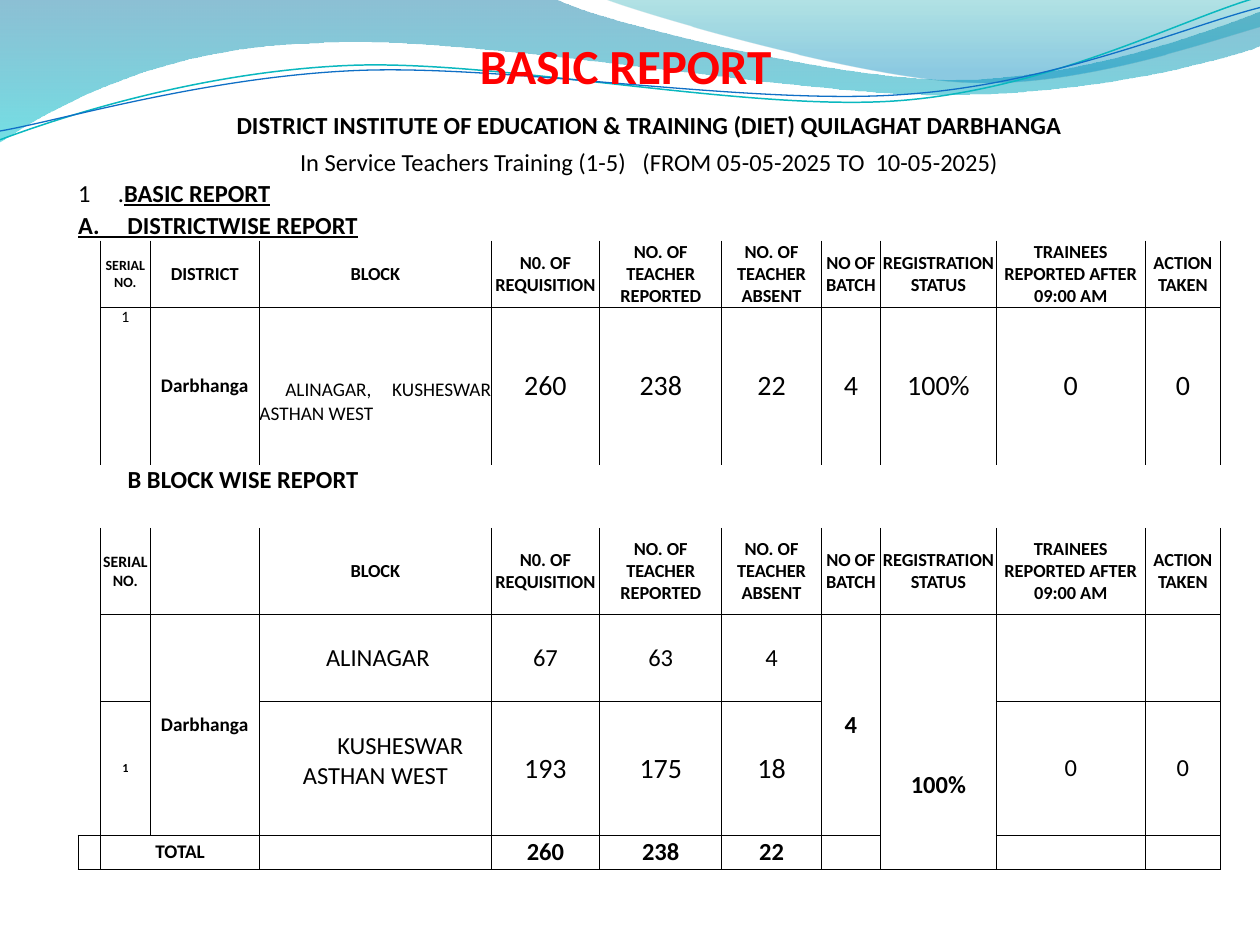
from dataclasses import dataclass
from itertools import product

from lxml.etree import SubElement
from pptx import Presentation
from pptx.dml.color import RGBColor
from pptx.enum.text import MSO_ANCHOR, PP_ALIGN
from pptx.oxml.ns import qn
from pptx.util import Cm, Pt

COLORS = {
    "black": "000000", "title": "FF0000",
    "deep": "0074A1", "aqua": "00C6CF", "teal": "00A1A9", "sky": "008BBF",
    "thread": "0AB8BF", "blue": "0F6FC6",
}
INCH = 2.54
LEFT, CENTER, JUSTIFY = PP_ALIGN.LEFT, PP_ALIGN.CENTER, PP_ALIGN.JUSTIFY
TOP, MIDDLE, BOTTOM = MSO_ANCHOR.TOP, MSO_ANCHOR.MIDDLE, MSO_ANCHOR.BOTTOM
SIDES = {"l": "a:lnL", "r": "a:lnR", "t": "a:lnT", "b": "a:lnB"}


@dataclass
class Wave:
    start: tuple
    segments: list
    stops: tuple = ()
    line: str = ""
    width: float = 0


@dataclass
class Entry:
    text: str
    size: float = 14
    bold: bool = False
    underline: bool = False
    align: int = CENTER
    anchor: int = MIDDLE
    indent: float = 0
    tab: float = 0
    top: float = 0


WAVES = [
    Wave((0, 0), [(4.4, -0.01), (4.76, 0.17, 6.64, 0.63, 7.58, 0.63),
                  (8.53, 0.63, 9.58, 0.26, 10, 0.09), (10.01, 0.36),
                  (9.83, 0.44, 8.7, 0.76, 7.46, 0.75),
                  (6.22, 0.75, 3.82, 0.28, 2.57, 0.34),
                  (1.29, 0.36, 0.46, 0.83, -0.01, 1.13)],
         stops=((0, "deep", 45), (100, "aqua", 55))),
    Wave((4.79, -0.01), [(5.09, 0.11, 6.82, 0.62, 7.69, 0.65),
                         (8.56, 0.69, 9.61, 0.32, 10, 0.21), (10, 0)],
         stops=((0, "teal", 30), (80, "sky", 45))),
    Wave((0, 1.11), [(0.48, 0.93, 1.58, 0.57, 2.77, 0.52),
                     (3.95, 0.47, 5.93, 0.89, 7.13, 0.8),
                     (8.33, 0.71, 9.38, 0.15, 9.98, -0.02)], line="thread", width=0.85),
    Wave((0, 1.04), [(0.47, 0.96, 1.64, 0.61, 2.83, 0.56),
                     (4.03, 0.51, 5.97, 0.84, 7.17, 0.75),
                     (8.36, 0.67, 9.41, 0.21, 10, 0.06)], line="blue", width=0.75),
]

COLS = [0.18, 0.39, 0.87, 1.84, 0.86, 0.97, 0.79, 0.47, 0.92, 1.18, 0.6]
ROWS = [0.26, 0.29, 0.25, 0.25, 0.53, 1.25, 0.5, 0.69, 0.69, 1.06, 0.27]
BANNER_ROWS = (0, 1, 2, 3, 6)
HEADER_ROWS = (4, 7)
MERGES = [(r, 0, r, 10) for r in BANNER_ROWS] + [
    (8, 2, 9, 2), (8, 7, 9, 7), (9, 8, 10, 8), (10, 1, 10, 2)]
HEADERS = ["BLOCK", "N0. OF REQUISITION", "NO. OF TEACHER REPORTED",
           "NO. OF TEACHER ABSENT", "NO OF BATCH", "REGISTRATION STATUS",
           "TRAINEES REPORTED AFTER 09:00 AM", "ACTION TAKEN"]

ENTRIES = {
    (0, 0): Entry("DISTRICT INSTITUTE OF EDUCATION & TRAINING (DIET) QUILAGHAT DARBHANGA",
                  bold=True, anchor=BOTTOM),
    (1, 0): Entry("In Service Teachers Training (1-5)   (FROM 05-05-2025 TO  10-05-2025)",
                  anchor=BOTTOM),
    (2, 0): Entry("1\t.", align=LEFT, anchor=BOTTOM, tab=0.8),
    (3, 0): Entry("A.     DISTRICTWISE REPORT", bold=True, underline=True,
                  align=LEFT, anchor=BOTTOM),
    (4, 1): Entry("SERIAL NO.", 8, True),
    (4, 2): Entry("DISTRICT", 10.5, True),
    (5, 1): Entry("1", 9, anchor=TOP),
    (5, 2): Entry("Darbhanga", 11, True),
    (5, 3): Entry("ALINAGAR, KUSHESWAR ASTHAN WEST", 11, align=JUSTIFY,
                  anchor=TOP, indent=0.52, top=1.43),
    (6, 0): Entry("B BLOCK WISE REPORT", bold=True, align=LEFT, anchor=TOP, indent=1),
    (7, 1): Entry("SERIAL NO.", 9, True),
    (8, 2): Entry("Darbhanga", 11, True),
    (8, 3): Entry("ALINAGAR", indent=0.1),
    (8, 7): Entry("4", bold=True),
    (9, 1): Entry("1", 7, True),
    (9, 3): Entry("KUSHESWAR ASTHAN WEST", anchor=TOP, indent=1, top=0.6),
    (9, 8): Entry("100%", bold=True),
    (9, 9): Entry("0"),
    (9, 10): Entry("0"),
    (10, 1): Entry("TOTAL", 11, True),
}
FIGURES = [(5, ["260", "238", "22", "4", "100%", "0", "0"], 16, False),
           (8, ["67", "63", "4"], 14, False),
           (9, ["193", "175", "18"], 16, False),
           (10, ["260", "238", "22"], 14, True)]
for row in HEADER_ROWS:
    ENTRIES.update({(row, c): Entry(t, 10.5, True) for c, t in enumerate(HEADERS, 3)})
for row, values, size, bold in FIGURES:
    ENTRIES.update({(row, c): Entry(t, size, bold) for c, t in enumerate(values, 4)})


def rgb(name: str) -> RGBColor:
    return RGBColor.from_string(COLORS[name])


def add_text(p, text: str, *, size: float, color: str = "black", bold: bool = False,
             underline: bool = False, align: int = CENTER) -> None:
    p.alignment = align
    r = p.add_run()
    r.text = text
    f = r.font
    f.name, f.size, f.bold, f.underline = "Calibri", Pt(size), bold, underline
    f.color.rgb = rgb(color)


def bend(sp, segments: list) -> None:
    lines = iter(list(sp._element.iter(qn("a:lnTo"))))
    for seg in segments:
        first = next(lines)
        if len(seg) == 2:
            continue
        outline = first.getparent()
        curve = SubElement(outline, qn("a:cubicBezTo"))
        outline.replace(first, curve)
        curve.append(first[0])
        for _ in range(2):
            line = next(lines)
            curve.append(line[0])
            outline.remove(line)


def draw_wave(shapes, wave: Wave) -> None:
    flat = wave.start + sum(wave.segments, ())
    pts = [(Cm(x * INCH), Cm(y * INCH)) for x, y in zip(flat[::2], flat[1::2])]
    builder = shapes.build_freeform(*pts[0])
    builder.add_line_segments(pts[1:], close=bool(wave.stops))
    sp = builder.convert_to_shape()
    bend(sp, wave.segments)
    sp.shadow.inherit = False
    sp.fill.background()
    if wave.line:
        sp.line.color.rgb = rgb(wave.line)
        sp.line.width = Pt(wave.width)
        return
    sp.line.fill.background()
    sp_pr = sp._element.spPr
    old = sp_pr.find(qn("a:noFill"))
    grad = SubElement(sp_pr, qn("a:gradFill"), rotWithShape="1")
    stops = SubElement(grad, qn("a:gsLst"))
    for pos, name, opacity in wave.stops:
        gs = SubElement(stops, qn("a:gs"), pos=str(pos * 1000))
        clr = SubElement(gs, qn("a:srgbClr"), val=COLORS[name])
        SubElement(clr, qn("a:alpha"), val=str(opacity * 1000))
    SubElement(grad, qn("a:lin"), ang="5400000", scaled="0")
    sp_pr.replace(old, grad)


def cell_sides(row: int, col: int) -> str:
    if row in BANNER_ROWS:
        return ""
    if col == 0 and row < 10:
        return "rb" if row == 9 else "r"
    if col == 8 and row in (8, 9):
        return "lrt" if row == 8 else "lrb"
    return {4: "lrb", 5: "lrt", 7: "lrb"}.get(row, "lrtb")


def set_borders(cell, sides: str) -> None:
    tc_pr = cell._tc.get_or_add_tcPr()
    for side, tag in SIDES.items():
        ln = SubElement(tc_pr, qn(tag), w=str(Pt(0.5)))
        if side in sides:
            fill = SubElement(ln, qn("a:solidFill"))
            SubElement(fill, qn("a:srgbClr"), val=COLORS["black"])
        else:
            SubElement(ln, qn("a:noFill"))


def fill_cell(cell, entry: Entry) -> None:
    cell.vertical_anchor = entry.anchor
    cell.margin_top = Cm(entry.top)
    p = cell.text_frame.paragraphs[0]
    add_text(p, entry.text, size=entry.size, bold=entry.bold,
             underline=entry.underline, align=entry.align)
    p_pr = p._p.get_or_add_pPr()
    if entry.indent:
        p_pr.set("indent", str(Cm(entry.indent)))
    if entry.tab:
        tabs = SubElement(p_pr, qn("a:tabLst"))
        SubElement(tabs, qn("a:tab"), pos=str(Cm(entry.tab)), algn="l")


def draw_report(shapes) -> None:
    frame = shapes.add_table(len(ROWS), len(COLS), Cm(0.62 * INCH), Cm(0.86 * INCH),
                             Cm(sum(COLS) * INCH), Cm(sum(ROWS) * INCH))
    table = frame.table
    table.first_row = table.horz_banding = False
    for col, width in zip(table.columns, COLS):
        col.width = Cm(width * INCH)
    for row, height in zip(table.rows, ROWS):
        row.height = Cm(height * INCH)
    for r, c in product(range(len(ROWS)), range(len(COLS))):
        cell = table.cell(r, c)
        cell.margin_left = cell.margin_right = cell.margin_top = cell.margin_bottom = 0
        set_borders(cell, cell_sides(r, c))
        cell.fill.background()
        if (r, c) in ENTRIES:
            fill_cell(cell, ENTRIES[r, c])
        else:
            cell.text_frame.paragraphs[0]._p.get_or_add_endParaRPr().set("sz", "800")
    add_text(table.cell(2, 0).text_frame.paragraphs[0], "BASIC REPORT",
             size=14, bold=True, underline=True, align=LEFT)
    for r1, c1, r2, c2 in MERGES:
        table.cell(r1, c1).merge(table.cell(r2, c2))


def main() -> None:
    prs = Presentation()
    prs.slide_width, prs.slide_height = Cm(25.4), Cm(19.05)
    s = prs.slides.add_slide(prs.slide_layouts[5])
    for wave in WAVES:
        draw_wave(s.shapes, wave)
    title = s.shapes.title
    title.left, title.top = Cm(3.52 * INCH), Cm(0.23 * INCH)
    title.width, title.height = Cm(2.89 * INCH), Cm(0.57 * INCH)
    tf = title.text_frame
    tf.vertical_anchor = TOP
    add_text(tf.paragraphs[0], "BASIC REPORT", size=28, color="title", bold=True)
    s.shapes._spTree.append(title._element)
    draw_report(s.shapes)
    prs.save("out.pptx")


if __name__ == "__main__":
    main()
